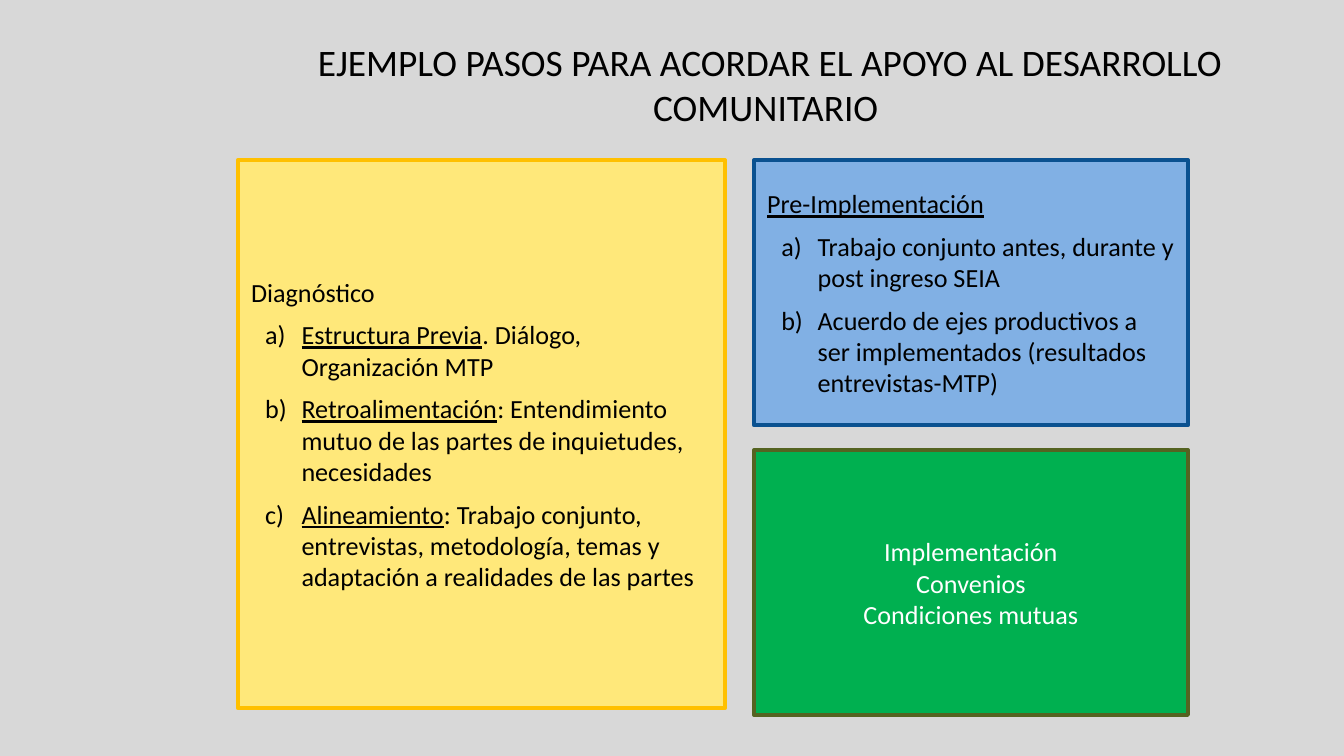
from lxml.etree import SubElement
from pptx import Presentation
from pptx.dml.color import RGBColor
from pptx.enum.shapes import MSO_SHAPE
from pptx.enum.text import MSO_ANCHOR, PP_ALIGN
from pptx.oxml.ns import qn
from pptx.util import Pt

PX = 4572  # 200 px to the inch


def paint(color, code):
    color.rgb = RGBColor.from_string(code)


def write(frame, lines, size, ink, align):
    """Fill a frame; a line is (listed, [(text, underlined), ...])."""
    frame.word_wrap = True
    for i, (listed, runs) in enumerate(lines):
        para = frame.paragraphs[0] if i == 0 else frame.add_paragraph()
        para.alignment = align
        if listed:
            para.space_before = Pt(6)
            props = para._p.get_or_add_pPr()
            props.set("marL", str(75 * PX))
            props.set("indent", str(-54 * PX))
            SubElement(props, qn("a:buAutoNum"), type="alphaLcParenR")
        for text, under in runs:
            run = para.add_run()
            run.text = text
            form = {"name": "Calibri", "size": Pt(size), "underline": under}
            for key, value in form.items():
                setattr(run.font, key, value)
            paint(run.font.color, ink)


deck = Presentation()
deck.slide_width, deck.slide_height = 2000 * PX, 1125 * PX
slide = deck.slides.add_slide(deck.slide_layouts[6])
back = slide.background.fill
back.solid()
paint(back.fore_color, "D8D8D8")

title = slide.shapes.add_textbox(292 * PX, 48 * PX, 1708 * PX, 90 * PX)
head = "EJEMPLO PASOS PARA ACORDAR EL APOYO AL DESARROLLO COMUNITARIO "
write(title.text_frame, [(False, [(head, False)])], 20, "000000", PP_ALIGN.CENTER)

study = [
    (False, [("Diagnóstico", False)]),
    (True, [("Estructura Previa", True), (". Diálogo, Organización MTP", False)]),
    (True, [("Retroalimentación", True),
            (": Entendimiento mutuo de las partes de inquietudes, necesidades", False)]),
    (True, [("Alineamiento", True),
            (": Trabajo conjunto, entrevistas, metodología, temas y "
             "adaptación a realidades de las partes", False)]),
]
plan = [
    (False, [("Pre-Implementación", True)]),
    (True, [("Trabajo conjunto antes, durante y post ingreso SEIA", False)]),
    (True, [("Acuerdo de ejes productivos a ser implementados "
             "(resultados entrevistas-MTP)", False)]),
]
action = [(False, [(text, False)])
          for text in ("Implementación", "Convenios", "Condiciones mutuas")]

panels = [
    ((354, 238, 725, 816), "FFE87A", "FFC000", "000000", PP_ALIGN.LEFT, study),
    ((1122, 238, 646, 395), "81B0E4", "0A5190", "000000", PP_ALIGN.LEFT, plan),
    ((1122, 670, 646, 394), "00B050", "546321", "FFFFFF", PP_ALIGN.CENTER, action),
]
for place, fill, edge, ink, align, lines in panels:
    panel = slide.shapes.add_shape(MSO_SHAPE.RECTANGLE, *(n * PX for n in place))
    panel.shadow.inherit = False
    panel.fill.solid()
    paint(panel.fill.fore_color, fill)
    paint(panel.line.color, edge)
    panel.line.width = Pt(2)
    panel.text_frame.vertical_anchor = MSO_ANCHOR.MIDDLE
    write(panel.text_frame, lines, 14, ink, align)

deck.save("out.pptx")
